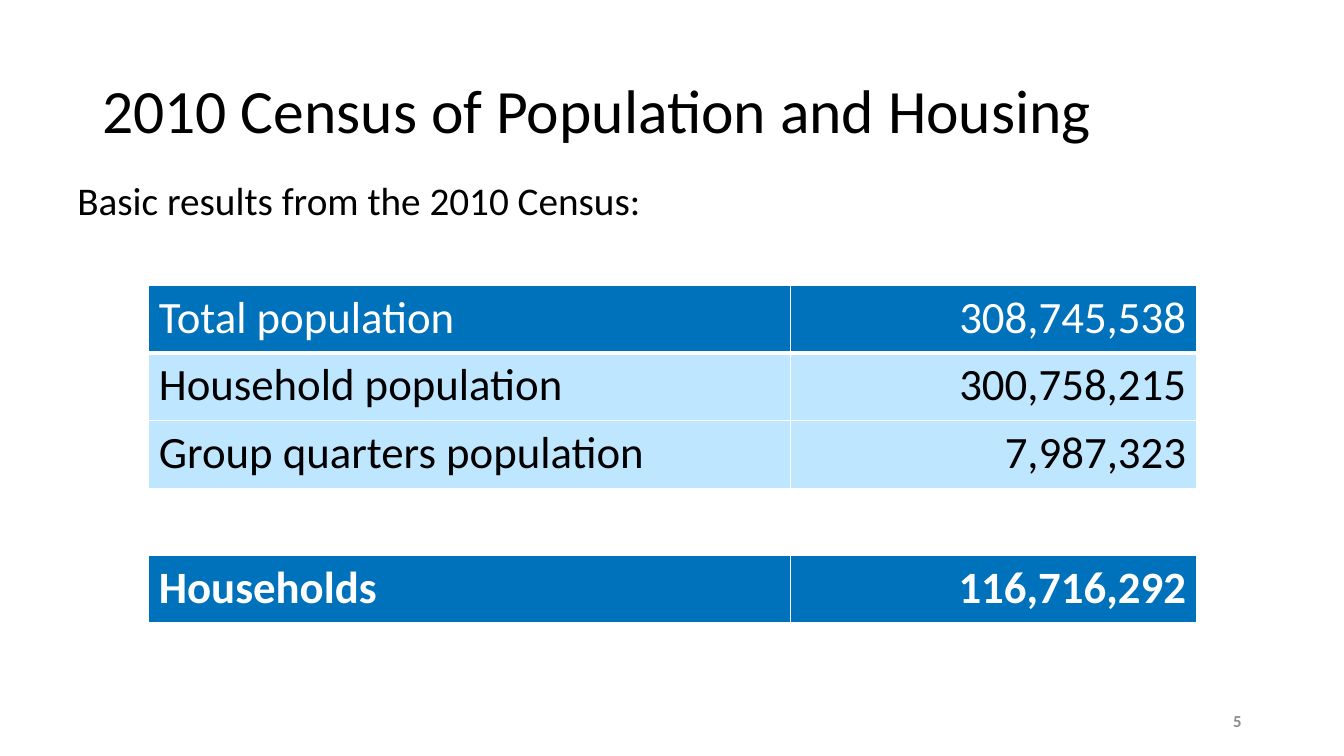
from lxml import etree
from pptx import Presentation
from pptx.dml.color import RGBColor
from pptx.enum import text
from pptx.oxml import ns
from pptx.util import Cm, Pt

COLORS = {"ink": "000000", "paper": "FFFFFF", "strong": "0072BC",
          "light": "BFE6FF", "number": "8C8C8C"}
FONT = "Calibri"

# label, count, fill, text colour, bold
CENSUS_ROWS = [
    ("Total population", "308,745,538", "strong", "paper", False),
    ("Household population", "300,758,215", "light", "ink", False),
    ("Group quarters population", "7,987,323", "light", "ink", False),
    ("", "", "paper", "ink", False),
    ("Households", "116,716,292", "strong", "paper", True),
]


def rgb(color):
    return RGBColor.from_string(COLORS[color])


def add_words(paragraph, words, size, color, bold=False, align=text.PP_ALIGN.LEFT):
    paragraph.alignment = align
    run = paragraph.add_run()
    run.text = words
    run.font.name = FONT
    run.font.size = Pt(size)
    run.font.bold = bold
    run.font.color.rgb = rgb(color)


def add_line(slide, box, words, size, color, anchor=text.MSO_ANCHOR.MIDDLE,
             spacing=1.0, **style):
    frame = slide.shapes.add_textbox(*map(Cm, box)).text_frame
    frame.word_wrap = True
    frame.vertical_anchor = anchor
    paragraph = frame.paragraphs[0]
    paragraph.line_spacing = spacing
    add_words(paragraph, words, size, color, **style)


def set_borders(cell, bottom):
    properties = cell._tc.get_or_add_tcPr()
    widths = {"lnL": 1, "lnR": 1, "lnT": 1, "lnB": bottom}
    for position, (side, width) in enumerate(widths.items()):
        border = etree.Element(ns.qn(f"a:{side}"), w=str(Pt(width)))
        fill = etree.SubElement(border, ns.qn("a:solidFill"))
        etree.SubElement(fill, ns.qn("a:srgbClr"), val=COLORS["paper"])
        properties.insert(position, border)


def add_census_table(slide, box):
    left, top, width, height = box
    table = slide.shapes.add_table(len(CENSUS_ROWS), 2, *map(Cm, box)).table
    label_width = 16.17
    table.columns[0].width = Cm(label_width)
    table.columns[1].width = Cm(width - label_width)
    aligns = (text.PP_ALIGN.LEFT, text.PP_ALIGN.RIGHT)
    for row, (label, count, fill, color, bold) in enumerate(CENSUS_ROWS):
        table.rows[row].height = Cm(height / len(CENSUS_ROWS))
        for column, words in enumerate((label, count)):
            cell = table.cell(row, column)
            cell.fill.solid()
            cell.fill.fore_color.rgb = rgb(fill)
            set_borders(cell, bottom=3 if row == 0 else 1)
            if words:
                add_words(cell.text_frame.paragraphs[0], words, 32, color,
                          bold, aligns[column])


def main():
    deck = Presentation()
    deck.slide_width, deck.slide_height = Cm(33.87), Cm(19.05)
    slide = deck.slides.add_slide(deck.slide_layouts[6])

    # Heading and introduction
    add_line(slide, (2.33, 1.01, 29.21, 3.68),
             "2010 Census of Population and Housing", 44, "ink", spacing=0.9)
    add_line(slide, (1.7, 4.45, 30.48, 4.65),
             "Basic results from the 2010 Census:", 28, "ink",
             anchor=text.MSO_ANCHOR.TOP, spacing=0.9)

    # Census counts
    add_census_table(slide, (3.75, 7.2, 26.4, 8.5))

    # Slide number
    add_line(slide, (23.92, 17.66, 7.62, 1.01), "5", 12, "number",
             bold=True, align=text.PP_ALIGN.RIGHT)

    deck.save("out.pptx")


if __name__ == "__main__":
    main()
